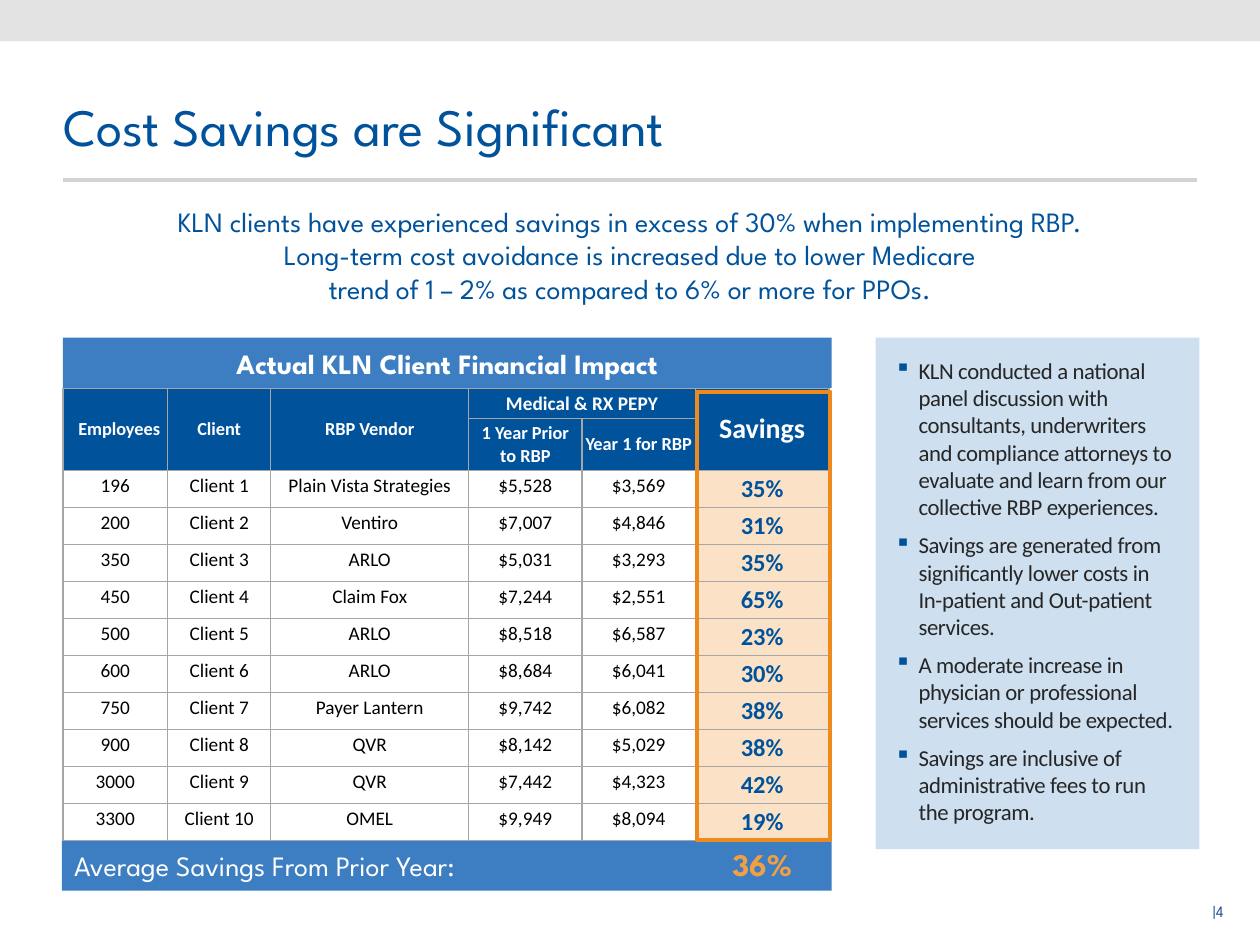
from lxml import etree
from pptx import Presentation
from pptx.dml.color import RGBColor
from pptx.enum.shapes import MSO_CONNECTOR, MSO_SHAPE
from pptx.enum.text import MSO_ANCHOR as ANCHOR, MSO_AUTO_SIZE, PP_ALIGN as ALIGN
from pptx.oxml.ns import qn
from pptx.util import Inches, Pt

NAVY = RGBColor(0x00, 0x52, 0x9B)
BLUE = RGBColor(0x3C, 0x7E, 0xC1)
PALE_BLUE = RGBColor(0xCE, 0xDF, 0xEF)
PEACH = RGBColor(0xFB, 0xE2, 0xC6)
ORANGE = RGBColor(0xEE, 0x8A, 0x1D)
LIGHT_ORANGE = RGBColor(0xF1, 0x9F, 0x45)
BAND_GRAY = RGBColor(0xC5, 0xC5, 0xC5)
RULE_GRAY = RGBColor(0xD1, 0xD3, 0xD4)
GRID_GRAY = RGBColor(0xA6, 0xA6, 0xA6)
PAGE_BLUE = RGBColor(0x24, 0x53, 0x97)
DARK = RGBColor(0x26, 0x26, 0x26)
BLACK = RGBColor(0, 0, 0)
WHITE = RGBColor(255, 255, 255)

HEAD, BODY = "League Spartan", "Calibri"


def add_xml(parent, tag, **attrs):
    return etree.SubElement(parent, qn(tag), attrs)


class SlideBuilder:
    def __init__(self, slide):
        self.s = slide

    def add_runs(self, p, text, size, color, font=HEAD, bold=False, align=ALIGN.LEFT,
                 spacing=None):
        p.alignment = align
        for i, line in enumerate(text.split("\n")):
            if i:
                p.add_line_break()
            r = p.add_run()
            r.text = line
            r.font.size, r.font.name, r.font.bold = Pt(size), font, bold
            r.font.color.rgb = color
            if spacing is not None:
                r.font._element.set("spc", str(spacing))

    def frame(self, sp, anchor=ANCHOR.TOP, insets=(0.1, 0.05)):
        tf = sp.text_frame
        tf.word_wrap = True
        tf.auto_size = MSO_AUTO_SIZE.NONE
        tf.vertical_anchor = anchor
        tf.margin_left = tf.margin_right = Inches(insets[0])
        tf.margin_top = tf.margin_bottom = Inches(insets[1])
        return tf

    def title(self, text, x, y, w, h):
        sp = self.s.shapes.title
        sp.left, sp.top, sp.width, sp.height = map(Inches, (x, y, w, h))
        p = self.frame(sp, ANCHOR.BOTTOM, (0, 0.05)).paragraphs[0]
        p.line_spacing = 0.9
        self.add_runs(p, text, 30, NAVY)

    def text(self, text, x, y, w, h, size, color, anchor=ANCHOR.TOP, insets=(0, 0), **style):
        sp = self.s.shapes.add_textbox(*map(Inches, (x, y, w, h)))
        self.add_runs(self.frame(sp, anchor, insets).paragraphs[0], text, size, color, **style)

    def rect(self, x, y, w, h, fill=None, line=None, alpha=None):
        sp = self.s.shapes.add_shape(MSO_SHAPE.RECTANGLE, *map(Inches, (x, y, w, h)))
        sp.shadow.inherit = False
        if fill is None:
            sp.fill.background()
        else:
            sp.fill.solid()
            sp.fill.fore_color.rgb = fill
            if alpha:
                clr = sp._element.spPr.find(".//" + qn("a:srgbClr"))
                add_xml(clr, "a:alpha", val=str(alpha * 1000))
        if line is None:
            sp.line.fill.background()
        else:
            sp.line.color.rgb = line
            sp.line.width = Pt(2.5)
        return sp

    def bar(self, text, x, y, w, h, **style):
        tf = self.frame(self.rect(x, y, w, h, BLUE), ANCHOR.MIDDLE)
        self.add_runs(tf.paragraphs[0], text, 16, WHITE, **style)

    def rule(self, x1, x2, y):
        cn = self.s.shapes.add_connector(
            MSO_CONNECTOR.STRAIGHT, Inches(x1), Inches(y), Inches(x2), Inches(y))
        cn.line.color.rgb = RULE_GRAY
        cn.line.width = Pt(2.25)
        add_xml(cn._element.spPr, "a:effectLst")

    def bullets(self, items, x, y, w, h):
        tf = self.frame(self.rect(x, y, w, h, PALE_BLUE), insets=(0.15, 0.15))
        for i, item in enumerate(items):
            p = tf.add_paragraph() if i else tf.paragraphs[0]
            pPr = p._p.get_or_add_pPr()
            pPr.set("marL", str(Inches(0.19)))
            pPr.set("indent", str(-Inches(0.19)))
            add_xml(add_xml(pPr, "a:buClr"), "a:srgbClr", val=str(NAVY))
            add_xml(pPr, "a:buChar", char="▪")
            p.space_after = Pt(6)
            self.add_runs(p, item, 13, DARK, BODY, spacing=-20)

    def table(self, x, y, cols, rows):
        gf = self.s.shapes.add_table(len(rows), len(cols), Inches(x), Inches(y),
                                     Inches(sum(cols)), Inches(sum(rows)))
        tbl = gf.table
        tbl.first_row = tbl.horz_banding = False
        for col, w in zip(tbl.columns, cols):
            col.width = Inches(w)
        for row, h in zip(tbl.rows, rows):
            row.height = Inches(h)
        for cell in tbl.iter_cells():
            cell.margin_left = cell.margin_right = Pt(2)
            cell.margin_top = cell.margin_bottom = Pt(2)
            tcPr = cell._tc.get_or_add_tcPr()
            for side in ("a:lnL", "a:lnR", "a:lnT", "a:lnB"):
                ln = add_xml(tcPr, side, w=str(Pt(0.75)))
                add_xml(add_xml(ln, "a:solidFill"), "a:srgbClr", val=str(GRID_GRAY))
            cell.fill.background()
        return tbl

    def cell(self, cell, text, size, color, bold=False, fill=None):
        if fill is not None:
            cell.fill.solid()
            cell.fill.fore_color.rgb = fill
            cell.vertical_anchor = ANCHOR.MIDDLE
        self.add_runs(cell.text_frame.paragraphs[0], text, size, color, BODY, bold, ALIGN.CENTER)


# (row, column, last row, last column, text, size)
HEADERS = [
    (0, 0, 1, 0, "Employees", 10.5), (0, 1, 1, 1, "Client", 10.5),
    (0, 2, 1, 2, "RBP Vendor", 10.5), (0, 3, 0, 4, "Medical & RX PEPY", 11),
    (0, 5, 1, 5, "Savings", 16), (1, 3, 1, 3, "1 Year Prior to RBP", 10.5),
    (1, 4, 1, 4, "Year 1 for RBP", 10.5),
]
# Employees, vendor, prior year, first year, savings
CLIENTS = [
    ("196", "Plain Vista Strategies", "$5,528", "$3,569", "35%"),
    ("200", "Ventiro", "$7,007", "$4,846", "31%"),
    ("350", "ARLO", "$5,031", "$3,293", "35%"),
    ("450", "Claim Fox", "$7,244", "$2,551", "65%"),
    ("500", "ARLO", "$8,518", "$6,587", "23%"),
    ("600", "ARLO", "$8,684", "$6,041", "30%"),
    ("750", "Payer Lantern", "$9,742", "$6,082", "38%"),
    ("900", "QVR", "$8,142", "$5,029", "38%"),
    ("3000", "QVR", "$7,442", "$4,323", "42%"),
    ("3300", "OMEL", "$9,949", "$8,094", "19%"),
]
POINTS = [
    "KLN conducted a national panel discussion with consultants, underwriters and "
    "compliance attorneys to evaluate and learn from our collective RBP experiences.",
    "Savings are generated from significantly lower costs in\n"
    "In-patient and Out-patient services.",
    "A moderate increase in physician or professional services should be expected.",
    "Savings are inclusive of administrative fees to run\nthe program.",
]


def main():
    prs = Presentation()
    prs.slide_width, prs.slide_height = Inches(10), Inches(7.5)
    b = SlideBuilder(prs.slides.add_slide(prs.slide_layouts[5]))

    # Page frame and heading
    b.rect(0, 0, 10, 0.33, BAND_GRAY, alpha=47)
    b.rule(0.5, 9.5, 1.43)
    b.text("|4", 9.22, 7.11, 0.59, 0.31, 9, PAGE_BLUE, insets=(0.1, 0.05), align=ALIGN.RIGHT)
    b.title("Cost Savings are Significant", 0.5, 0.45, 9, 0.85)
    b.text("KLN clients have experienced savings in excess of 30% when implementing RBP.\n"
           "Long-term cost avoidance is increased due to lower Medicare\n"
           "trend of 1 – 2% as compared to 6% or more for PPOs.",
           0.69, 1.62, 8.62, 0.81, 16, NAVY, align=ALIGN.CENTER)

    # Average savings bar
    b.bar("Average Savings From Prior Year:", 0.49, 6.67, 6.11, 0.4)
    b.text("36%", 5.68, 6.7, 0.74, 0.32, 18, LIGHT_ORANGE, ANCHOR.MIDDLE,
           bold=True, align=ALIGN.CENTER)

    # Client table over the savings column tint
    b.rect(5.53, 3.73, 1.06, 2.93, PEACH)
    head_rows = [0.24, 0.41]
    row_h = (3.59 - sum(head_rows)) / len(CLIENTS)
    tbl = b.table(0.5, 3.08, [0.83, 0.82, 1.57, 0.9, 0.9, 1.06],
                  head_rows + [row_h] * len(CLIENTS))
    for r1, c1, r2, c2, text, size in HEADERS:
        if (r1, c1) != (r2, c2):
            tbl.cell(r1, c1).merge(tbl.cell(r2, c2))
        b.cell(tbl.cell(r1, c1), text, size, WHITE, True, NAVY)
    tbl.cell(0, 0).margin_left = Inches(0.09)
    for n, (employees, *figures, savings) in enumerate(CLIENTS, 1):
        for c, text in enumerate([employees, f"Client {n}", *figures]):
            b.cell(tbl.cell(n + 1, c), text, 11, BLACK)
        b.cell(tbl.cell(n + 1, 5), savings, 14, NAVY, True)

    # Savings highlight and table heading
    b.rect(5.53, 3.11, 1.06, 3.56, line=ORANGE)
    b.bar("Actual KLN Client Financial Impact", 0.5, 2.68, 6.1, 0.4,
          bold=True, align=ALIGN.CENTER)

    # Side panel
    b.bullets(POINTS, 6.95, 2.68, 2.57, 4.06)

    prs.save("out.pptx")


if __name__ == "__main__":
    main()
